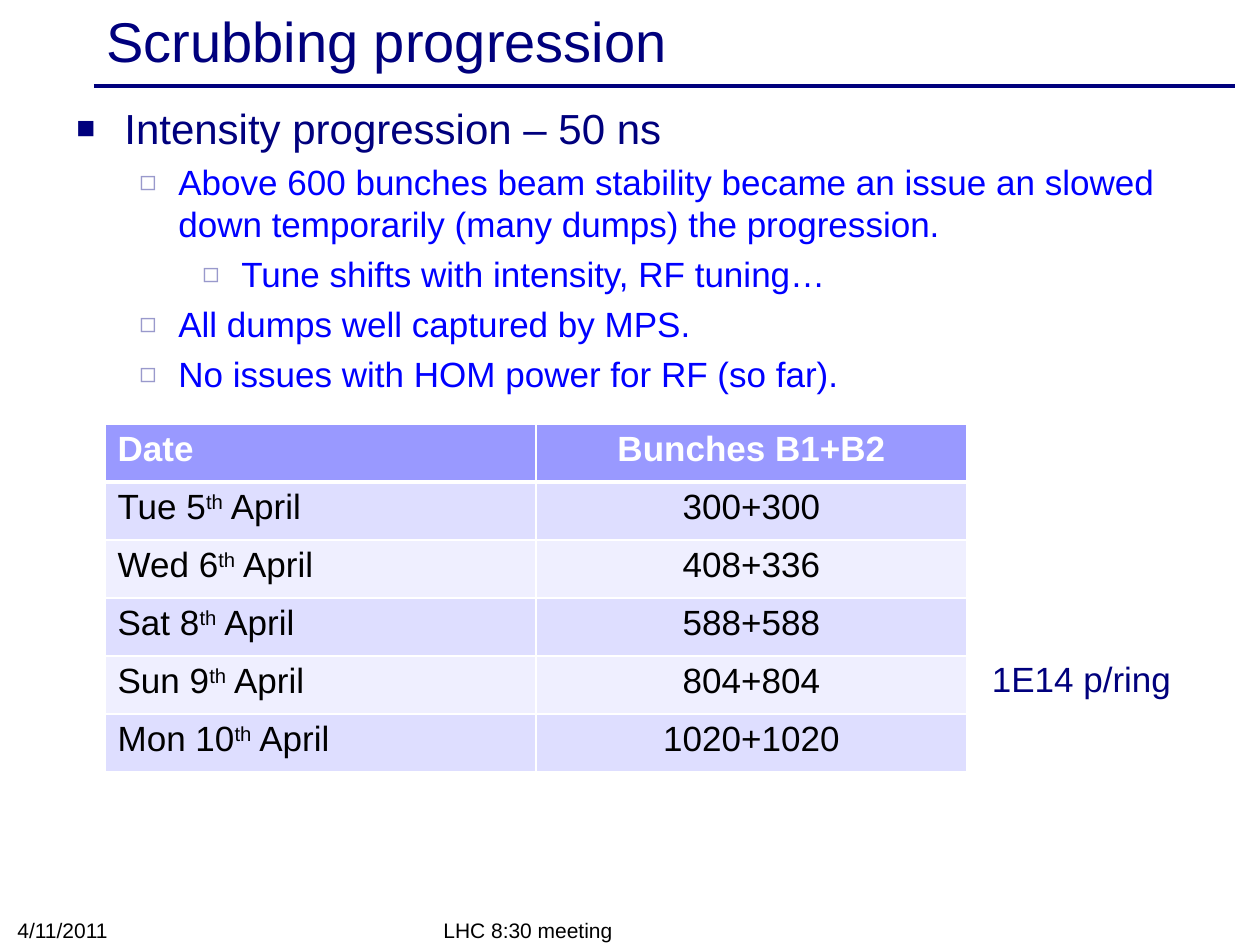
from lxml.etree import SubElement
from pptx import Presentation
from pptx.dml.color import RGBColor
from pptx.enum.shapes import MSO_CONNECTOR
from pptx.enum.text import MSO_ANCHOR, MSO_AUTO_SIZE, PP_ALIGN
from pptx.oxml.ns import qn
from pptx.util import Pt

PX = 914400 // 126
FONT = "Arial"
COLORS = {
    "navy": "00007D", "blue": "0000FF", "black": "000000", "white": "FFFFFF",
    "bullet": "9999CC", "header": "9999FF", "odd": "DEDEFF", "even": "EFEFFF",
}
# Bullet levels: mark, mark colour, mark size %, indent, hang, text size, text colour
LEVELS = [
    ("■", "navy", 75, 48, 48, 24, "navy"),
    ("◻", "bullet", 80, 102, 39, 20, "blue"),
    ("◻", "bullet", 80, 165, 39, 20, "blue"),
]
BULLETS = [
    (0, "Intensity progression – 50 ns"),
    (1, "Above 600 bunches beam stability became an issue an slowed down "
        "temporarily (many dumps) the progression."),
    (2, "Tune shifts with intensity, RF tuning…"),
    (1, "All dumps well captured by MPS."),
    (1, "No issues with HOM power for RF (so far)."),
]
HEADINGS = ["Date", "Bunches B1+B2"]
FILLS = [("Tue 5", "300+300"), ("Wed 6", "408+336"), ("Sat 8", "588+588"),
         ("Sun 9", "804+804"), ("Mon 10", "1020+1020")]


def px(*lengths):
    return [length * PX for length in lengths]


def rgb(name):
    return RGBColor.from_string(COLORS[name])


def style(font, size, color, bold=False):
    font.name, font.size, font.bold = FONT, Pt(size), bold
    font.color.rgb = rgb(color)


def add_box(slide, place, anchor=MSO_ANCHOR.TOP):
    frame = slide.shapes.add_textbox(*px(*place)).text_frame
    frame.word_wrap = True
    frame.vertical_anchor = anchor
    return frame


def add_label(slide, text, place, size, color, anchor):
    frame = add_box(slide, place, anchor)
    frame.text = text
    style(frame.paragraphs[0].runs[0].font, size, color)
    return frame


def add_rule(slide, start, end):
    rule = slide.shapes.add_connector(MSO_CONNECTOR.STRAIGHT, *px(*start, *end))
    rule.line.color.rgb = rgb("navy")
    rule.line.width = Pt(2)
    SubElement(rule._element.spPr, qn("a:effectLst"))


def set_bullet(para, mark, color, percent, indent, hang):
    properties = para._p.get_or_add_pPr()
    properties.set("marL", str(indent * PX))
    properties.set("indent", str(-hang * PX))
    mark_color = SubElement(properties, qn("a:buClr"))
    SubElement(mark_color, qn("a:srgbClr"), val=COLORS[color])
    SubElement(properties, qn("a:buSzPct"), val=str(percent * 1000))
    SubElement(properties, qn("a:buFont"), typeface=FONT)
    SubElement(properties, qn("a:buChar"), char=mark)


def add_bullets(slide, items, place):
    frame = add_box(slide, place)
    for index, (level, text) in enumerate(items):
        para = frame.add_paragraph() if index else frame.paragraphs[0]
        para.text = text
        para.level = level
        *bullet, size, color = LEVELS[level]
        set_bullet(para, *bullet)
        if index:
            para.space_before = Pt(4.6)
        style(para.runs[0].font, size, color)


def set_borders(cell, bottom):
    properties = cell._tc.get_or_add_tcPr()
    for side, width in (("L", 1), ("R", 1), ("T", 1), ("B", bottom)):
        line = SubElement(properties, qn(f"a:ln{side}"), w=str(Pt(width)))
        fill = SubElement(line, qn("a:solidFill"))
        SubElement(fill, qn("a:srgbClr"), val=COLORS["white"])


def fill_cell(cell, parts, align, fill, color, header):
    set_borders(cell, 3 if header else 1)
    cell.fill.solid()
    cell.fill.fore_color.rgb = rgb(fill)
    para = cell.text_frame.paragraphs[0]
    para.alignment = align
    for text in parts:
        span = para.add_run()
        span.text = text
        style(span.font, 20, color, header)
        if text == "th":
            span.font._element.set("baseline", "30000")


def add_bunch_table(slide, left, top, column_width, row_height):
    rows = [[[text] for text in HEADINGS]]
    rows += [[[day, "th", " April"], [bunches]] for day, bunches in FILLS]
    table = slide.shapes.add_table(
        len(rows), 2, *px(left, top, 2 * column_width, row_height * len(rows))).table
    for column in table.columns:
        column.width = column_width * PX
    for index, row in enumerate(rows):
        table.rows[index].height = row_height * PX
        header = index == 0
        fill = "header" if header else ("even", "odd")[index % 2]
        color = "white" if header else "black"
        for column, align in enumerate((PP_ALIGN.LEFT, PP_ALIGN.CENTER)):
            fill_cell(table.cell(index, column), row[column], align, fill, color, header)


def main():
    deck = Presentation()
    deck.slide_width, deck.slide_height = px(1260, 945)
    slide = deck.slides.add_slide(deck.slide_layouts[6])

    # Title and rule
    add_rule(slide, (94, 86), (1235, 86))
    add_label(slide, "Scrubbing progression", (94, 4, 1134, 72), 32, "navy", MSO_ANCHOR.MIDDLE)

    # Bunches per day
    add_bunch_table(slide, 105, 424, 431, 58)

    # Footer
    add_label(slide, "LHC 8:30 meeting", (431, 914, 399, 35), 12, "black", MSO_ANCHOR.BOTTOM)
    add_label(slide, "4/11/2011", (5, 912, 294, 37), 12, "black", MSO_ANCHOR.BOTTOM)

    # Main points
    add_bullets(slide, BULLETS, (64, 96, 1134, 704))

    # Note beside the table
    note = add_label(slide, "1E14 p/ring", (978, 651, 207, 55), 20, "navy", MSO_ANCHOR.TOP)
    note.word_wrap = False
    note.auto_size = MSO_AUTO_SIZE.SHAPE_TO_FIT_TEXT
    note.paragraphs[0].alignment = PP_ALIGN.CENTER

    deck.save("out.pptx")


if __name__ == "__main__":
    main()
